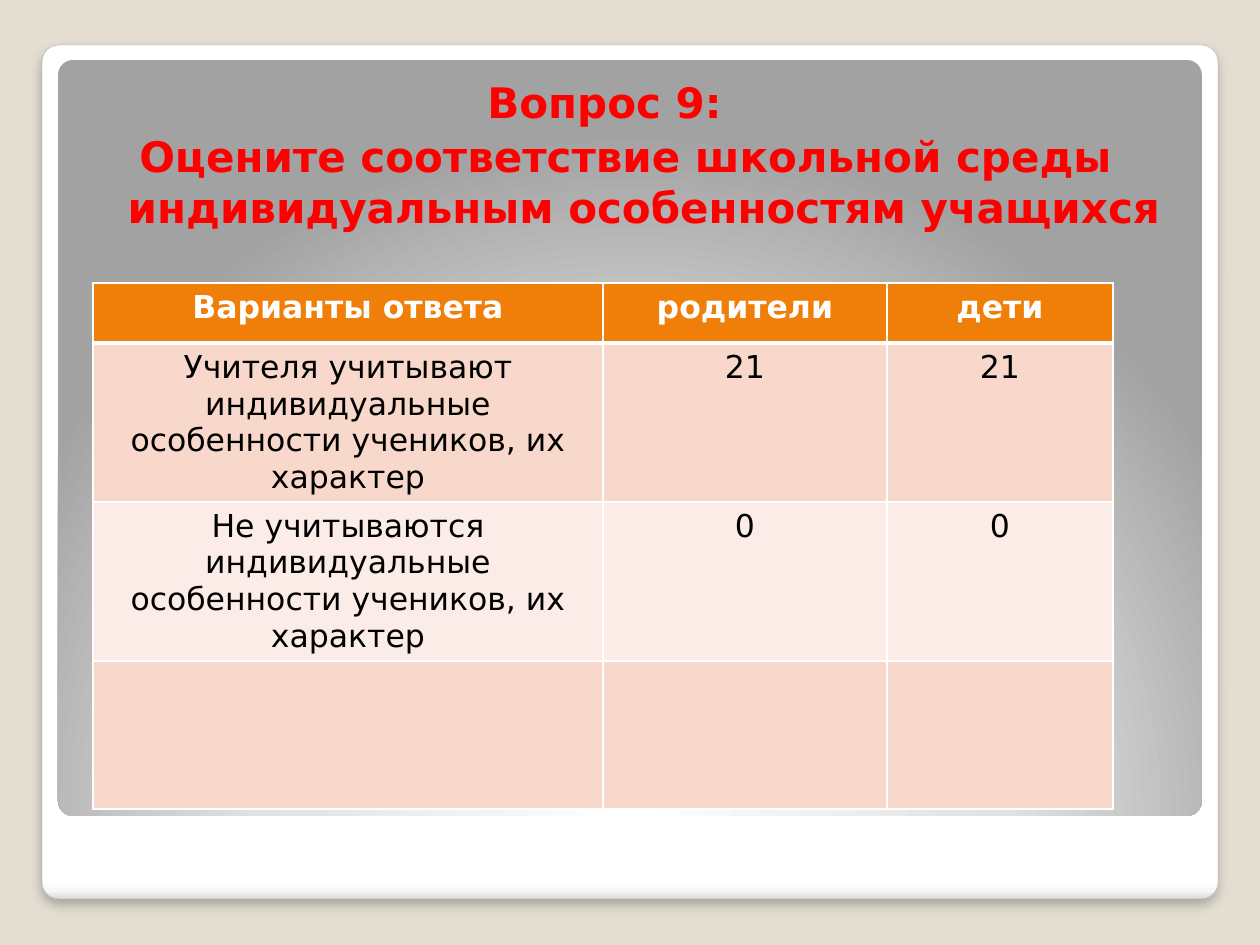
from dataclasses import dataclass

from pptx import Presentation, oxml, util as u
from pptx.dml import color
from pptx.enum import shapes, text
from pptx.oxml import ns

SCALE = 914400 / 126


def px(length):
    return u.Emu(round(length * SCALE))


def rgb(value):
    return color.RGBColor.from_string(value)


def element(tag, body="", **attributes):
    listed = " ".join(f'{key}="{value}"' for key, value in attributes.items())
    return oxml.parse_xml(f'<a:{tag} {ns.nsdecls("a")} {listed}>{body}</a:{tag}>')


@dataclass(frozen=True)
class Theme:
    font: str = "DejaVu Sans"
    backdrop: str = "E3DED1"
    frame_line: str = "A4A4A4"
    frame: tuple = ((0, "FFFFFF"), (98, "FFFFFF"), (99, "F7F7F7"), (100, "DADADA"))
    panel: tuple = ((0, "FFFFFF"), (55, "E1E1E1"), (100, "A2A2A2"))
    question: str = "FF0000"
    header: str = "F07F09"
    bands: tuple = ("F9D8CC", "FCECE7")
    white: str = "FFFFFF"
    black: str = "000000"
    question_size: int = 24
    table_size: int = 18


DOWNWARD = '<a:lin ang="5400000" scaled="0"/>'
FROM_BELOW = ('<a:path path="circle"><a:fillToRect l="50000" t="175000" '
              'r="50000" b="-75000"/></a:path>')


class Builder:
    def __init__(self, slide, theme):
        self.slide = slide
        self.theme = theme
        background = slide.background.fill
        background.solid()
        background.fore_color.rgb = rgb(theme.backdrop)

    def style(self, paragraph, size, tint, bold):
        paragraph.alignment = text.PP_ALIGN.CENTER
        font = paragraph.font
        font.name = self.theme.font
        font.size = u.Pt(size)
        font.bold = bold
        font.color.rgb = rgb(tint)

    def panel(self, box, stops, direction):
        panel = self.slide.shapes.add_shape(
            shapes.MSO_SHAPE.ROUNDED_RECTANGLE, *map(px, box))
        panel.adjustments[0] = 0.02
        panel.shadow.inherit = False
        panel.line.fill.background()
        panel.fill.solid()
        listed = "".join(
            f'<a:gs pos="{place * 1000}"><a:srgbClr val="{tint}"/></a:gs>'
            for place, tint in stops)
        properties = panel._element.spPr
        properties.replace(properties.find(ns.qn("a:solidFill")),
                           element("gradFill", f"<a:gsLst>{listed}</a:gsLst>{direction}"))
        return panel

    def frame(self, box):
        frame = self.panel(box, self.theme.frame, DOWNWARD)
        frame.line.color.rgb = rgb(self.theme.frame_line)
        frame.line.width = u.Pt(0.16)
        shade = f'<a:srgbClr val="{self.theme.black}"><a:alpha val="25000"/></a:srgbClr>'
        frame._element.spPr.find(ns.qn("a:effectLst")).append(
            element("outerShdw", shade, blurRad=u.Pt(6), dist=u.Pt(4),
                    dir=5400000, rotWithShape=0))

    def question(self, box, lines):
        title, body = self.slide.placeholders
        title._element.getparent().remove(title._element)
        self.slide.shapes._spTree.append(body._element)
        body.left, body.top, body.width, body.height = map(px, box)
        frame = body.text_frame
        frame.word_wrap = True
        frame.vertical_anchor = text.MSO_ANCHOR.TOP
        frame.margin_left, frame.margin_top = px(25), px(13)
        frame.margin_right, frame.margin_bottom = px(13), px(6)
        frame.text = "\n".join(line for line, _ in lines)
        for index, (paragraph, (_, right)) in enumerate(zip(frame.paragraphs, lines)):
            properties = paragraph._p.get_or_add_pPr()
            properties.set("marL", str(px(37)))
            properties.set("marR", str(px(right)))
            properties.set("indent", str(px(-37)))
            properties.append(element("buNone"))
            paragraph.space_before = u.Pt(2.5 if index else 0)
            self.style(paragraph, self.theme.question_size, self.theme.question, True)

    def borders(self, cell, top, bottom):
        properties = cell._tc.get_or_add_tcPr()
        paint = f'<a:solidFill><a:srgbClr val="{self.theme.white}"/></a:solidFill>'
        widths = {"lnL": 1, "lnR": 1, "lnT": top, "lnB": bottom}
        for place, (side, width) in enumerate(widths.items()):
            properties.insert(place, element(side, paint, w=u.Pt(width)))

    def table(self, corner, widths, heights, answers):
        theme = self.theme
        box = (*corner, sum(widths), sum(heights))
        table = self.slide.shapes.add_table(
            len(heights), len(widths), *map(px, box)).table
        for column, width in zip(table.columns, widths):
            column.width = px(width)
        for number, (row, height, answer) in enumerate(zip(table.rows, heights, answers)):
            row.height = px(height)
            heading = number == 0
            fill = theme.header if heading else theme.bands[(number - 1) % 2]
            for cell, wording in zip(row.cells, answer):
                cell.fill.solid()
                cell.fill.fore_color.rgb = rgb(fill)
                self.borders(cell, 3 if number == 1 else 1, 3 if heading else 1)
                cell.text = wording
                self.style(cell.text_frame.paragraphs[0], theme.table_size,
                           theme.white if heading else theme.black, heading)


def main():
    deck = Presentation()
    deck.slide_width, deck.slide_height = px(1260), px(945)
    builder = Builder(deck.slides.add_slide(deck.slide_layouts[1]), Theme())
    builder.frame((42, 45, 1176, 854))
    builder.panel((58, 60, 1144, 756), builder.theme.panel, FROM_BELOW)
    builder.question((42, 63, 1155, 809), [
        ("Вопрос 9:", 42),
        ("Оцените соответствие школьной среды индивидуальным особенностям учащихся", 0),
    ])
    builder.table((93, 283), (510, 284, 226), (60, 159, 159, 148), [
        ("Варианты ответа", "родители", "дети"),
        ("Учителя учитывают индивидуальные особенности учеников, их характер", "21", "21"),
        ("Не учитываются индивидуальные особенности учеников, их характер", "0", "0"),
        ("", "", ""),
    ])
    deck.save("out.pptx")


if __name__ == "__main__":
    main()
